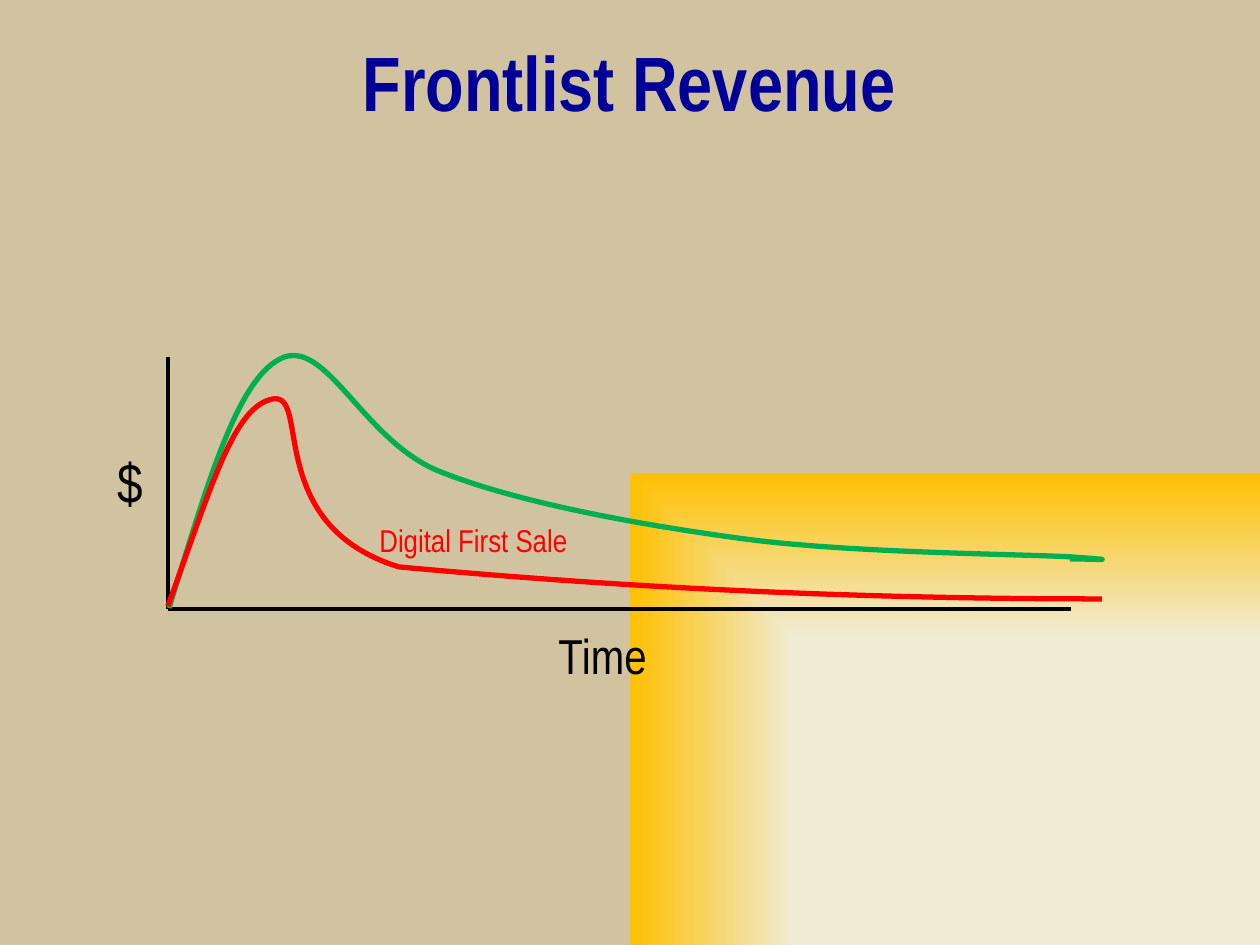
"""Builds the Frontlist Revenue slide: two revenue curves over time."""
import pptx
import pptx.dml.color
import pptx.enum.shapes
import pptx.enum.text
import pptx.oxml
import pptx.oxml.ns
import pptx.util

COLORS = {
    "title": "000099", "ink": "000000", "frontlist": "00B050", "digital": "FF0000",
    "cream": "F0EBD5", "gold": "FFC000", "tan": "D1C39F",
}
FONT = "Arial Narrow"
EMU_PER_PX = 914400 / 126
DRAWING = pptx.oxml.ns.nsdecls("a")


def emu(px):
    return pptx.util.Emu(round(px * EMU_PER_PX))


def rgb(name):
    return pptx.dml.color.RGBColor.from_string(COLORS[name])


class Painter:
    """Draws styled elements on the current slide."""

    def __init__(self, slide):
        self.slide = slide
        self.shapes = slide.shapes

    def background(self, stops):
        self.slide.background.fill.solid()
        properties = self.slide.element.find(".//" + pptx.oxml.ns.qn("p:bgPr"))
        marks = "".join(
            f'<a:gs pos="{percent * 1000}"><a:srgbClr val="{COLORS[name]}"/></a:gs>'
            for percent, name in stops
        )
        gradient = pptx.oxml.parse_xml(
            f'<a:gradFill {DRAWING} rotWithShape="1">'
            f'<a:gsLst>{marks}</a:gsLst><a:path path="rect">'
            '<a:fillToRect l="100000" t="100000"/></a:path></a:gradFill>'
        )
        properties.replace(properties[0], gradient)

    def start_group(self):
        self.shapes = self.slide.shapes.add_group_shape().shapes

    def stroke(self, shape, color, width):
        shape.line.color.rgb = rgb(color)
        shape.line.width = pptx.util.Pt(width)

    def axis(self, start, end):
        line = self.shapes.add_connector(
            pptx.enum.shapes.MSO_CONNECTOR.STRAIGHT, *map(emu, start + end))
        self.stroke(line, "ink", 2.25)
        line._element.spPr.append(pptx.oxml.parse_xml(f"<a:effectLst {DRAWING}/>"))

    def curve(self, points, color):
        builder = self.shapes.build_freeform(*map(emu, points[0]))
        builder.add_line_segments([tuple(map(emu, point)) for point in points[1:]], close=False)
        outline = builder.convert_to_shape()
        segments = outline._element.findall(".//" + pptx.oxml.ns.qn("a:lnTo"))
        for first in range(0, len(segments), 3):
            bend = pptx.oxml.parse_xml(f"<a:cubicBezTo {DRAWING}/>")
            segments[first].addprevious(bend)
            for segment in segments[first:first + 3]:
                bend.append(segment[0])
                segment.getparent().remove(segment)
        outline.shadow.inherit = False
        outline.fill.background()
        self.stroke(outline, color, 3)

    def text(self, box, words, size, color):
        frame = self.shapes.add_textbox(*map(emu, box)).text_frame
        frame.word_wrap = False
        frame.auto_size = pptx.enum.text.MSO_AUTO_SIZE.SHAPE_TO_FIT_TEXT
        run = frame.paragraphs[0].add_run()
        run.text = words
        run.font.name = FONT
        run.font.size = pptx.util.Pt(size)
        run.font.color.rgb = rgb(color)
        return frame

    def title(self, box, words):
        frame = self.text(box, words, 44, "title")
        frame.word_wrap = True
        frame.auto_size = pptx.enum.text.MSO_AUTO_SIZE.NONE
        frame.vertical_anchor = pptx.enum.text.MSO_ANCHOR.MIDDLE
        frame.margin_left = frame.margin_right = emu(5)
        heading = frame.paragraphs[0]
        heading.alignment = pptx.enum.text.PP_ALIGN.CENTER
        heading.line_spacing = 0.85
        heading.runs[0].font.bold = True


def main():
    deck = pptx.Presentation()
    deck.slide_width, deck.slide_height = emu(1260), emu(945)
    painter = Painter(deck.slides.add_slide(deck.slide_layouts[6]))

    painter.background([(65, "cream"), (100, "gold"), (100, "tan")])
    painter.title((31, 41, 1197, 94), "Frontlist Revenue")

    origin = (168, 609)
    painter.axis((168, 357), origin)
    painter.axis(origin, (1071, 609))

    frontlist = [
        (169, 608), (205, 494), (235, 382), (280, 359),
        (326, 335), (363, 442), (441, 472),
        (519, 503), (640, 525), (745, 539),
        (850, 553), (1018, 554), (1072, 557),
        (1126, 561), (1097, 559), (1070, 559),
    ]
    digital = [
        (168, 606), (212, 485), (234, 406), (273, 399),
        (311, 392), (263, 525), (399, 567),
        (552, 581), (790, 599), (1102, 599),
    ]
    painter.curve(frontlist, "frontlist")
    painter.text((105, 441, 49, 81), "$", 32, "ink")
    painter.text((546, 619, 116, 72), "Time", 28, "ink")

    painter.start_group()
    painter.curve(digital, "digital")
    painter.text((367, 515, 218, 50), "Digital First Sale", 18, "digital")

    deck.save("out.pptx")


if __name__ == "__main__":
    main()
